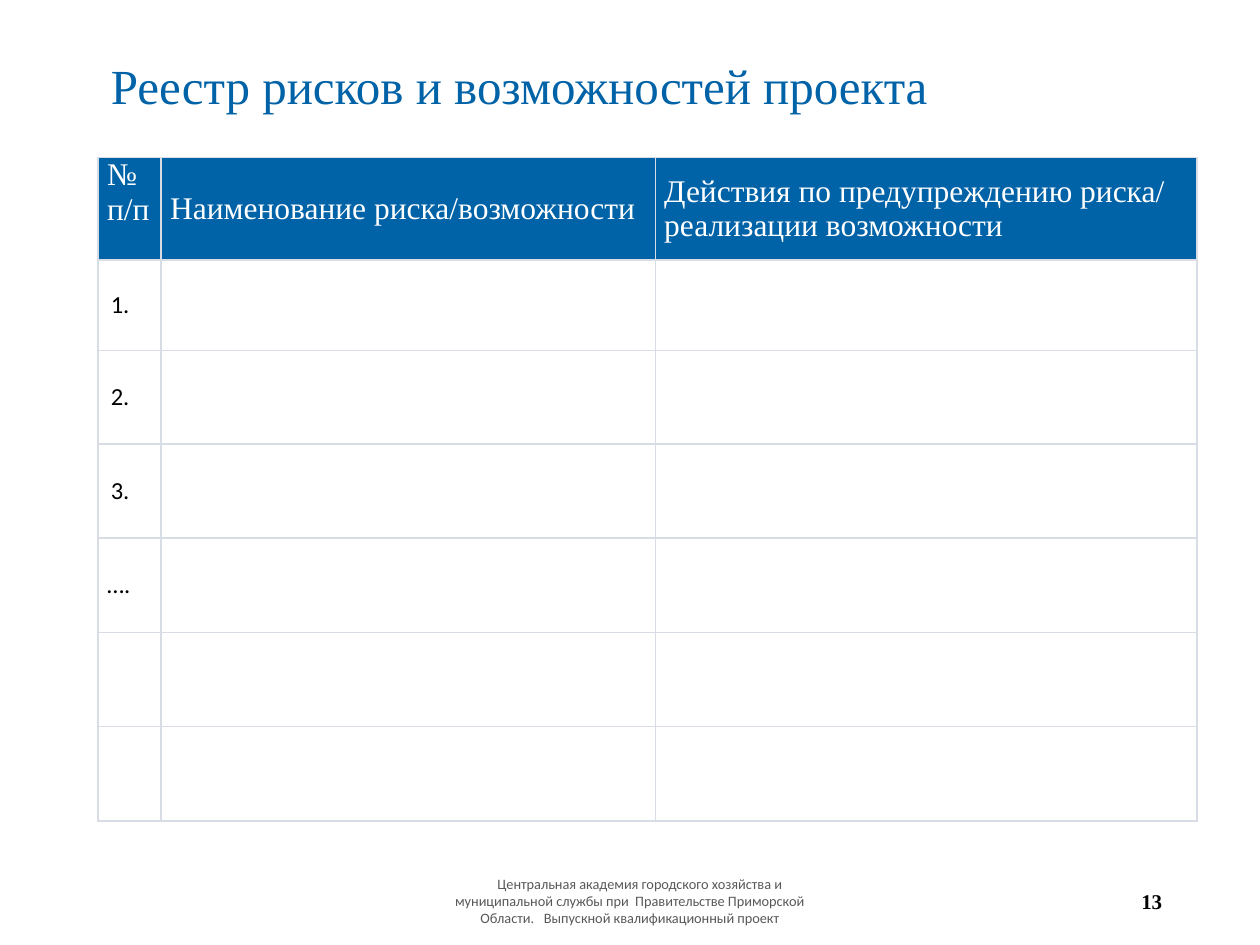
from lxml import etree
from pptx import Presentation
from pptx.dml.color import RGBColor
from pptx.enum.text import MSO_ANCHOR, PP_ALIGN
from pptx.oxml.ns import qn
from pptx.util import Cm, Pt

MIDDLE, TOP = MSO_ANCHOR.MIDDLE, MSO_ANCHOR.TOP
LEFT, CENTER, RIGHT = PP_ALIGN.LEFT, PP_ALIGN.CENTER, PP_ALIGN.RIGHT
SERIF, SANS = "Times New Roman", "Calibri"
BLUE, WHITE, BLACK, GRAY, BORDER = "0062A7", "FFFFFF", "000000", "595959", "D8DCE5"

TITLE = "Реестр рисков и возможностей проекта"
FOOTER = ("Центральная академия городского хозяйства и муниципальной службы при  "
          "Правительстве Приморской Области.   Выпускной квалификационный проект")
HEADERS = ["№\nп/п", "Наименование риска/возможности",
           "Действия по предупреждению риска/\nреализации возможности"]
ROW_LABELS = ["1.", "2.", "3.", "….", "", ""]
COLUMN_WIDTHS = [1.27, 9.96, 10.92]
ROW_HEIGHTS = [2.06, 1.83, 1.88] + [1.9] * 4


def rgb(color):
    return RGBColor.from_string(color)


def write(frame, text, font, size, color, align=LEFT, bold=False):
    frame.text = text
    for paragraph in frame.paragraphs:
        paragraph.alignment = align
        for run in paragraph.runs:
            run.font.name = font
            run.font.size = Pt(size)
            run.font.bold = bold
            run.font.color.rgb = rgb(color)


def add_title(slide):
    title = slide.shapes.title
    title.left, title.top, title.width, title.height = Cm(1.98), Cm(0.64), Cm(21.31), Cm(2.29)
    frame = title.text_frame
    write(frame, TITLE, SERIF, 28, BLUE)
    frame.vertical_anchor = MIDDLE
    frame.paragraphs[0].line_spacing = 0.9


def add_footer_text(slide, left, width, *text_format):
    box = slide.shapes.add_textbox(Cm(left), Cm(17.65), Cm(width), Cm(1.02))
    frame = box.text_frame
    frame.word_wrap = True
    frame.vertical_anchor = MIDDLE
    write(frame, *text_format)
    return frame


def border_cell(cell):
    """Put the border lines ahead of the fill, as the schema orders them."""
    properties = cell._tc.get_or_add_tcPr()
    for index, side in enumerate(("a:lnL", "a:lnR", "a:lnT", "a:lnB")):
        line = etree.Element(qn(side), w=str(Pt(1)))
        fill = etree.SubElement(line, qn("a:solidFill"))
        etree.SubElement(fill, qn("a:srgbClr"), val=BORDER)
        properties.insert(index, line)


def fill_cell(cell, text, font, size, color, background, anchor=MIDDLE, tight=False):
    write(cell.text_frame, text, font, size, color)
    cell.vertical_anchor = anchor
    if tight:
        cell.margin_left = cell.margin_right = Cm(0.18)
        cell.margin_top = cell.margin_bottom = 0
    cell.fill.solid()
    cell.fill.fore_color.rgb = rgb(background)
    border_cell(cell)


def add_risk_table(slide):
    table = slide.shapes.add_table(
        len(ROW_HEIGHTS), len(COLUMN_WIDTHS), Cm(1.98), Cm(3.18),
        Cm(sum(COLUMN_WIDTHS)), Cm(sum(ROW_HEIGHTS))).table
    for column, width in zip(table.columns, COLUMN_WIDTHS):
        column.width = Cm(width)
    for row, height in zip(table.rows, ROW_HEIGHTS):
        row.height = Cm(height)
    for col, header in enumerate(HEADERS):
        fill_cell(table.cell(0, col), header, SERIF, 18, WHITE, BLUE,
                  TOP if col == 0 else MIDDLE, tight=True)
    for row, label in enumerate(ROW_LABELS, start=1):
        for col, text in enumerate([label, "", ""]):
            fill_cell(table.cell(row, col), text, SANS, 14, BLACK, WHITE,
                      tight=text == "….")


def main():
    presentation = Presentation()
    presentation.slide_width, presentation.slide_height = Cm(25.4), Cm(19.05)
    slide = presentation.slides.add_slide(presentation.slide_layouts[5])
    add_title(slide)
    add_risk_table(slide)
    footer = add_footer_text(slide, 8.41, 8.58, FOOTER, SANS, 8.2, GRAY, CENTER)
    footer.paragraphs[0]._p.get_or_add_pPr().set("indent", str(Cm(0.4)))
    add_footer_text(slide, 17.96, 5.72, "13", SERIF, 12, BLACK, RIGHT, True)
    presentation.save("out.pptx")


if __name__ == "__main__":
    main()
